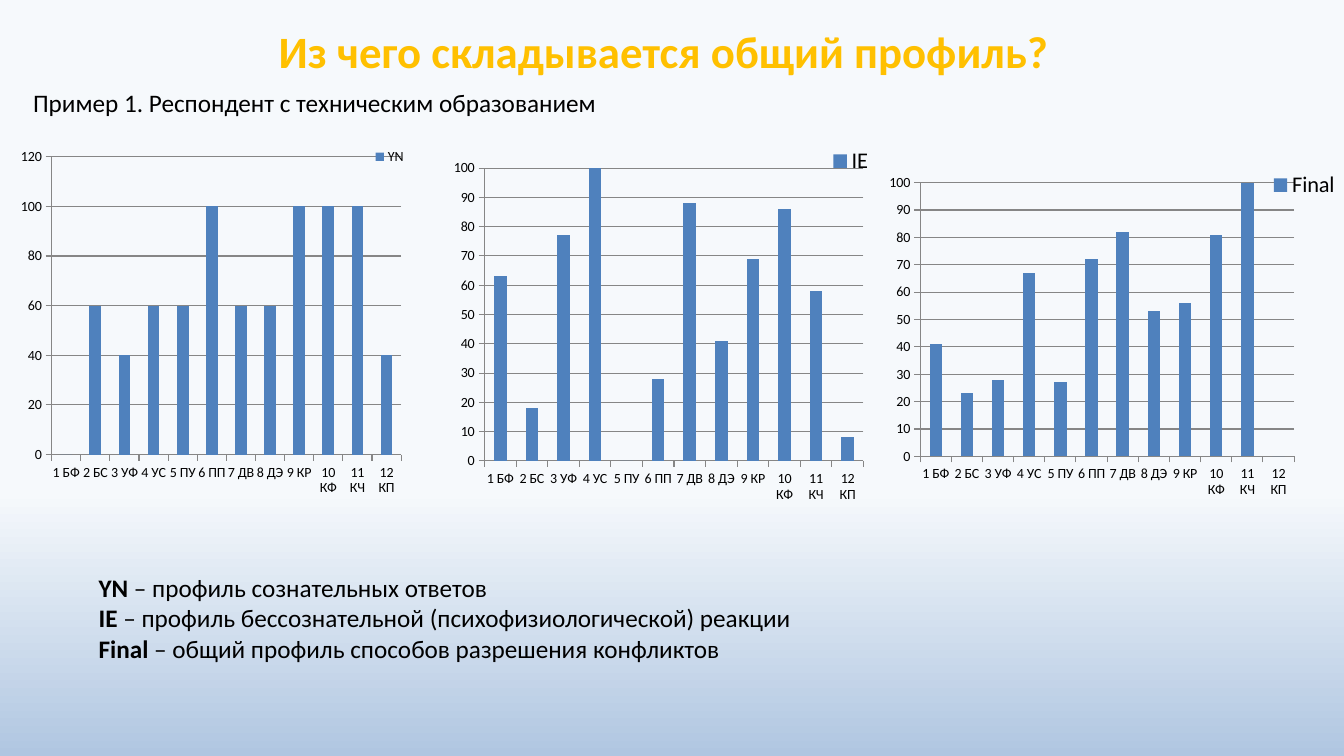
"""Build a slide comparing three response profiles of one respondent."""
from lxml import etree
from pptx import Presentation
from pptx.chart.data import CategoryChartData
from pptx.dml.color import RGBColor
from pptx.enum.chart import XL_CHART_TYPE, XL_LEGEND_POSITION, XL_TICK_MARK
from pptx.enum.text import MSO_ANCHOR, PP_ALIGN
from pptx.oxml.ns import qn
from pptx.util import Inches, Pt

COLUMN = XL_CHART_TYPE.COLUMN_CLUSTERED
RIGHT = XL_LEGEND_POSITION.RIGHT
OUT = XL_TICK_MARK.OUTSIDE
NONE = XL_TICK_MARK.NONE
MIDDLE, TOP = MSO_ANCHOR.MIDDLE, MSO_ANCHOR.TOP
CENTER, LEFT = PP_ALIGN.CENTER, PP_ALIGN.LEFT

TITLE = "Из чего складывается общий профиль?"
INTRO = "Пример 1. Респондент с техническим образованием"
NOTES = [
    ("YN", " – профиль сознательных ответов"),
    ("IE", " – профиль бессознательной (психофизиологической) реакции"),
    ("Final", " – общий профиль способов разрешения конфликтов"),
]
CATS = ["1 БФ", "2 БС", "3 УФ", "4 УС", "5 ПУ", "6 ПП",
        "7 ДВ", "8 ДЭ", "9 КР", "10 КФ", "11 КЧ", "12 КП"]
CHARTS = [
    dict(name="YN", vals=[0, 60, 40, 60, 60, 100, 60, 60, 100, 100, 100, 40],
         box=(0.17, 1.28, 4.28, 3.94), plot=(0.08, 0.07, 0.81, 0.75),
         key=(0.82, 0.04), size="small", top=120, step=20),
    dict(name="IE", vals=[63, 18, 77, 100, 0, 28, 88, 41, 69, 86, 58, 8],
         box=(4.11, 0.88, 4.64, 4.15), plot=(0.15, 0.19, 0.81, 0.7),
         key=(0.88, 0.13), size="key", top=100, step=10),
    dict(name="Final", vals=[41, 23, 28, 67, 27, 72, 82, 53, 56, 81, 100, 0],
         box=(8.76, 1.58, 4.58, 3.88), plot=(0.08, 0.06, 0.81, 0.7),
         key=(0.83, 0.02), size="key", top=100, step=10),
]
THEME = dict(
    font="Calibri",
    color=dict(title="FFC000", text="000000", bar="4F81BD", line="868686",
               sky="F6F9FC", base="B0C6E1"),
    size=dict(title=32, body=18, key=16, small=10),
)


def tint(name):
    return RGBColor.from_string(THEME["color"][name])


def style(font, size, color="text", bold=False):
    font.name = THEME["font"]
    font.size = Pt(THEME["size"][size])
    font.color.rgb = tint(color)
    font.bold = bold


def add_text(slide, box, lines, size="body", color="text", align=LEFT, anchor=TOP):
    frame = slide.shapes.add_textbox(*map(Inches, box)).text_frame
    frame.word_wrap = True
    frame.vertical_anchor = anchor
    for i, (lead, rest) in enumerate(lines):
        para = frame.paragraphs[0] if i == 0 else frame.add_paragraph()
        para.alignment = align
        for text, bold in ((lead, True), (rest, False)):
            if text:
                run = para.add_run()
                run.text = text
                style(run.font, size, color, bold)


def place(owner, index, spots, inner=False):
    for old in owner.findall(qn("c:layout")):
        owner.remove(old)
    layout = etree.Element(qn("c:layout"))
    manual = etree.SubElement(layout, qn("c:manualLayout"))
    rules = [("layoutTarget", "inner")] if inner else []
    rules += [("xMode", "edge"), ("yMode", "edge"), *zip("xywh", spots)]
    for tag, val in rules:
        etree.SubElement(manual, qn("c:" + tag)).set("val", str(val))
    owner.insert(index, layout)


def add_chart(slide, name, vals, box, plot, key, size, top, step):
    data = CategoryChartData(number_format="0")
    data.categories = CATS
    data.add_series(name, vals)
    chart = slide.shapes.add_chart(COLUMN, *map(Inches, box), data).chart
    style(chart.font, "small")
    chart.has_title = False
    chart.has_legend = True
    legend = chart.legend
    legend.position = RIGHT
    legend.include_in_layout = False
    style(legend.font, size)
    place(legend._element, 1, key)
    place(chart._chartSpace.chart.plotArea, 0, plot, inner=True)

    bars = chart.plots[0]
    bars.gap_width = 150
    bars.vary_by_categories = False
    fill = bars.series[0].format.fill
    fill.solid()
    fill.fore_color.rgb = tint("bar")

    scale = chart.value_axis
    scale.minimum_scale, scale.maximum_scale = 0, top
    scale.major_unit = step
    scale.has_major_gridlines = True
    scale.tick_labels.number_format = "0"
    scale.tick_labels.number_format_is_linked = False
    for axis in (scale, chart.category_axis):
        axis.major_tick_mark = OUT
        axis.minor_tick_mark = NONE
    for part in (scale, chart.category_axis, scale.major_gridlines):
        part.format.line.color.rgb = tint("line")
        part.format.line.width = Pt(0.75)


def paint(slide):
    fill = slide.background.fill
    fill.gradient()
    fill.gradient_angle = 270
    for stop, (name, spot) in zip(fill.gradient_stops, (("sky", 0.65), ("base", 1))):
        stop.color.rgb = tint(name)
        stop.position = spot


def main():
    deck = Presentation()
    deck.slide_width, deck.slide_height = Inches(13.33), Inches(7.5)
    slide = deck.slides.add_slide(deck.slide_layouts[6])
    paint(slide)
    add_text(slide, (0.68, 0.12, 11.81, 0.76), [(TITLE, "")], size="title",
             color="title", align=CENTER, anchor=MIDDLE)
    for spec in CHARTS:
        add_chart(slide, **spec)
    add_text(slide, (0.88, 5.63, 7.6, 1.01), NOTES)
    add_text(slide, (0.23, 0.82, 5.95, 0.4), [("", INTRO)])
    deck.save("out.pptx")


if __name__ == "__main__":
    main()
